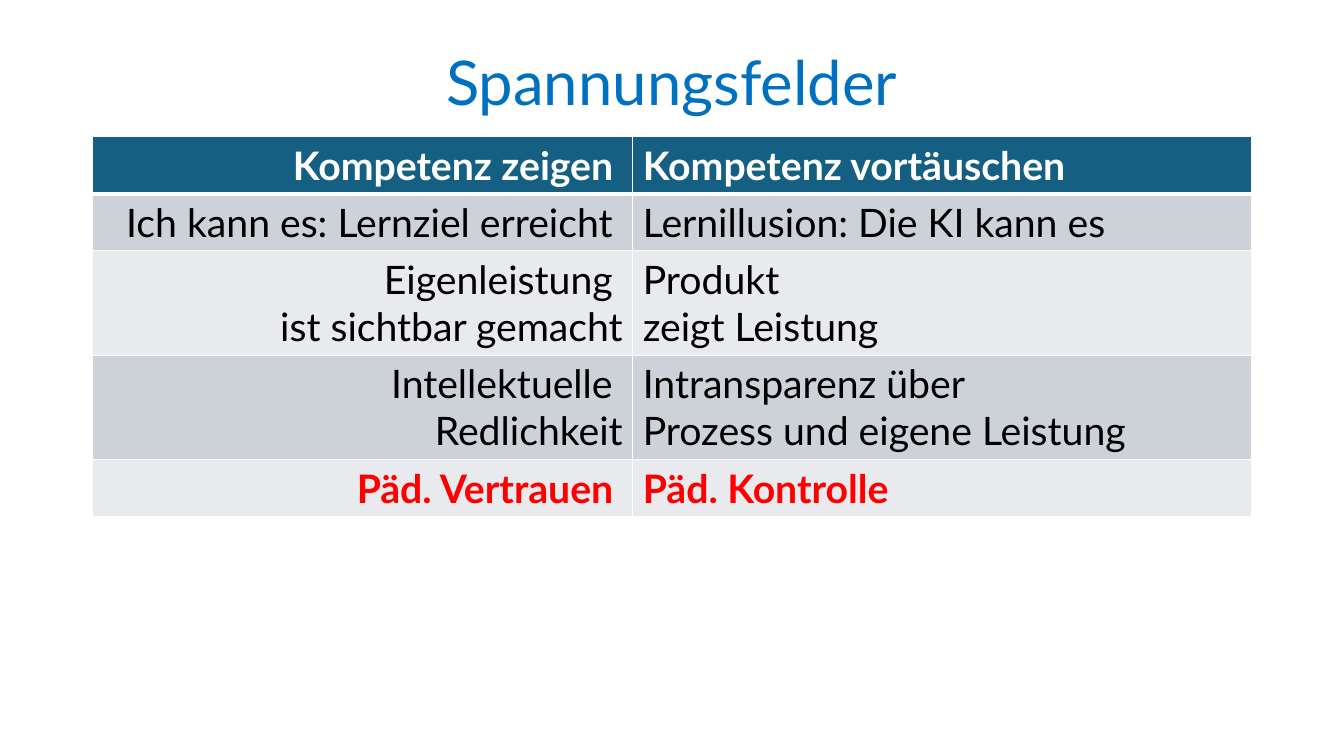
import pptx
import pptx.dml.color
import pptx.enum.text
import pptx.oxml.ns
import pptx.util
from lxml import etree

Pt = pptx.util.Pt
ALIGN = pptx.enum.text.PP_ALIGN
COLORS = {
    "title": "0070C0",
    "header": "156082",
    "band_dark": "CCD2D8",
    "band_light": "E8EAED",
    "white": "FFFFFF",
    "body": "000000",
    "conclusion": "FF0000",
}
# "\n" starts a new paragraph, "\v" a new line in the same paragraph
TENSIONS = [
    ("Kompetenz zeigen ", "Kompetenz vortäuschen"),
    ("Ich kann es: Lernziel erreicht ", "Lernillusion: Die KI kann es"),
    ("Eigenleistung \nist sichtbar gemacht", "Produkt\nzeigt Leistung"),
    ("Intellektuelle \nRedlichkeit", "Intransparenz über \vProzess und eigene Leistung"),
    ("Päd. Vertrauen ", "Päd. Kontrolle"),
]


def rgb(name):
    return pptx.dml.color.RGBColor.from_string(COLORS[name])


class SlideBuilder:
    font = "Lato"
    cell_size = 28
    line_height = 33.6
    cell_padding = 7.2

    def __init__(self, slide):
        self.slide = slide

    def style_text(self, frame, size, color, align, bold=False, spacing=None):
        for paragraph in frame.paragraphs:
            paragraph.alignment = align
            paragraph.line_spacing = spacing
            for run in paragraph.runs:
                run.font.name = self.font
                run.font.size = Pt(size)
                run.font.bold = bold
                run.font.color.rgb = rgb(color)

    def add_title(self, text, left, top, width, height):
        title = self.slide.shapes.add_textbox(Pt(left), Pt(top), Pt(width), Pt(height))
        frame = title.text_frame
        frame.word_wrap = True
        frame.vertical_anchor = pptx.enum.text.MSO_ANCHOR.MIDDLE
        frame.text = text
        self.style_text(frame, 44, "title", ALIGN.CENTER, spacing=0.9)

    def add_borders(self, cell, top, bottom):
        properties = cell._tc.get_or_add_tcPr()
        for side, width in (("L", 1), ("R", 1), ("T", top), ("B", bottom)):
            line = etree.SubElement(properties, pptx.oxml.ns.qn(f"a:ln{side}"), w=str(Pt(width)))
            fill = etree.SubElement(line, pptx.oxml.ns.qn("a:solidFill"))
            etree.SubElement(fill, pptx.oxml.ns.qn("a:srgbClr"), val=COLORS["white"])

    def add_comparison(self, rows, left, top, column_widths):
        """Add a table with a header, banded rows and a highlighted last row."""
        heights = [
            self.cell_padding + self.line_height * max(len(text.splitlines()) for text in row)
            for row in rows
        ]
        table = self.slide.shapes.add_table(
            len(rows), len(column_widths),
            Pt(left), Pt(top), Pt(sum(column_widths)), Pt(sum(heights)),
        ).table
        for column, width in zip(table.columns, column_widths):
            column.width = Pt(width)
        last = len(rows) - 1
        for index, (row, height) in enumerate(zip(rows, heights)):
            table.rows[index].height = Pt(height)
            band = "header" if index == 0 else ("band_light", "band_dark")[index % 2]
            color = {0: "white", last: "conclusion"}.get(index, "body")
            for side, (text, align) in enumerate(zip(row, (ALIGN.RIGHT, ALIGN.LEFT))):
                cell = table.cell(index, side)
                self.add_borders(cell, 3 if index == 1 else 1, 3 if index == 0 else 1)
                cell.fill.solid()
                cell.fill.fore_color.rgb = rgb(band)
                cell.text_frame.text = text
                self.style_text(cell.text_frame, self.cell_size, color, align, index in (0, last))


def main():
    presentation = pptx.Presentation()
    presentation.slide_width = Pt(960)
    presentation.slide_height = Pt(540)
    builder = SlideBuilder(presentation.slides.add_slide(presentation.slide_layouts[6]))
    builder.add_title("Spannungsfelder", 66, 8.6, 828, 104.4)
    builder.add_comparison(TENSIONS, 66, 97.5, (386, 442))
    presentation.save("out.pptx")


if __name__ == "__main__":
    main()
